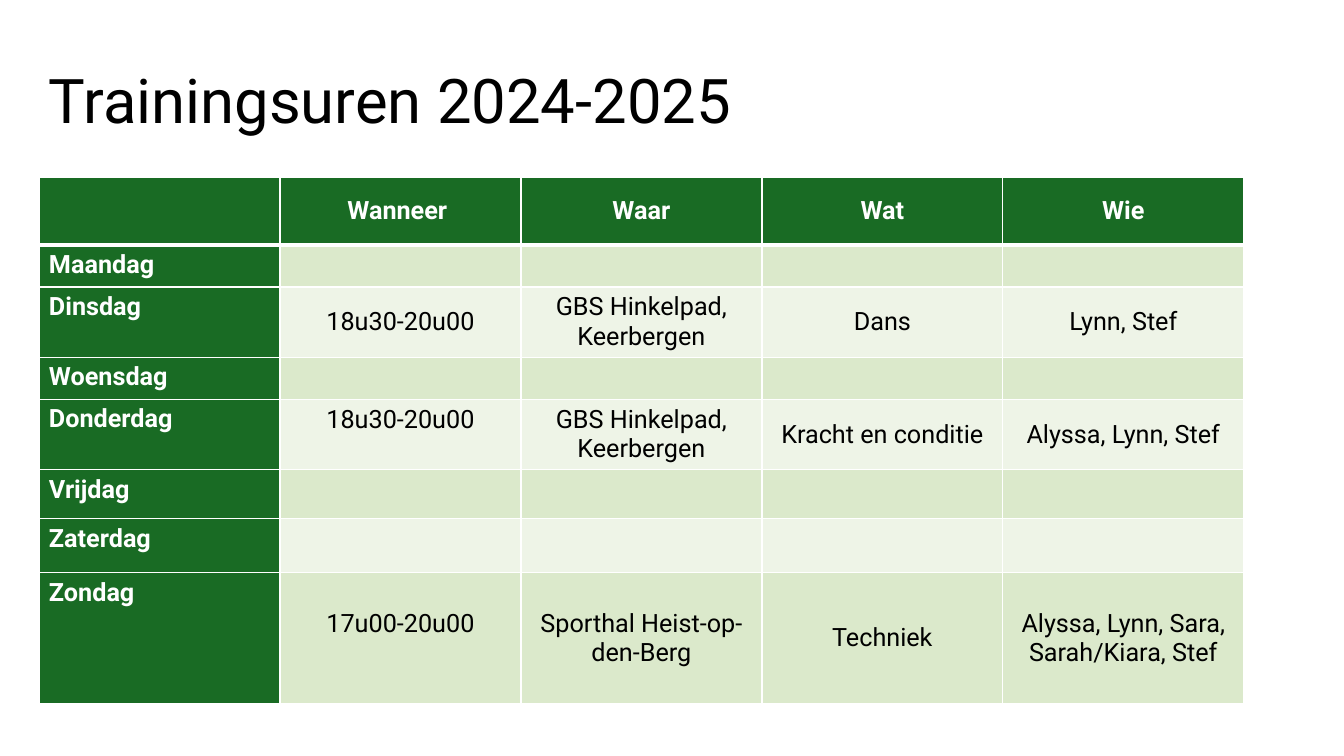
from dataclasses import dataclass

from lxml.etree import SubElement
from pptx import Presentation
from pptx.dml.color import RGBColor
from pptx.enum.text import MSO_ANCHOR, PP_ALIGN
from pptx.oxml.ns import qn
from pptx.util import Emu, Pt

TITLE = "Trainingsuren 2024-2025"
HEADINGS = ["", "Wanneer ", "Waar", "Wat", "Wie"]
SCHOOL = "GBS Hinkelpad, Keerbergen"
DAYS = [
    ("Maandag", "", "", "", ""),
    ("Dinsdag", "18u30-20u00", SCHOOL, "Dans", "Lynn, Stef"),
    ("Woensdag", "", "", "", ""),
    ("Donderdag", "18u30-20u00", SCHOOL, "Kracht en conditie", "Alyssa, Lynn, Stef"),
    ("Vrijdag", "", "", "", ""),
    ("Zaterdag", "", "", "", ""),
    ("Zondag", "17u00-20u00", "Sporthal Heist-op-den-Berg", "Techniek",
     "Alyssa, Lynn, Sara, Sarah/Kiara, Stef"),
]
ROW_HEIGHTS = [68, 42, 70, 42, 70, 49, 54, 131]
COLUMN_WIDTH = 241
LEFT, TITLE_TOP, TABLE_TOP = 39, 65, 177
RAISED_TIMES = {"Donderdag", "Zondag"}  # their time sits half a line above centre
LINE_HEIGHT = 29
MARGIN_X, MARGIN_Y = 10, 5


@dataclass(frozen=True)
class Theme:
    font: str = "Roboto"
    title_size: int = 44
    cell_size: int = 18
    thin: int = 1
    thick: int = 3
    green: str = "196B24"
    band_dark: str = "DBE9CB"
    band_light: str = "EEF4E7"
    white: str = "FFFFFF"
    black: str = "000000"


THEME = Theme()


def px(length):
    return Emu(round(length * 914400 / 100.8))


def style_font(paragraph, size, color, bold=False):
    for run in paragraph.runs:
        run.font.name = THEME.font
        run.font.size = Pt(size)
        run.font.bold = bold
        run.font.color.rgb = RGBColor.from_string(color)


def set_margins(target):
    target.margin_left = target.margin_right = px(MARGIN_X)
    target.margin_top = target.margin_bottom = px(MARGIN_Y)


def add_borders(cell, row):
    top = THEME.thick if row == 1 else THEME.thin
    bottom = THEME.thick if row == 0 else THEME.thin
    properties = cell._tc.get_or_add_tcPr()
    sides = {"lnL": THEME.thin, "lnR": THEME.thin, "lnT": top, "lnB": bottom}
    for side, width in sides.items():
        line = SubElement(properties, qn(f"a:{side}"), w=str(Pt(width)))
        fill = SubElement(line, qn("a:solidFill"))
        SubElement(fill, qn("a:srgbClr"), val=THEME.white)


def fill_cell(cell, text, row, column):
    is_heading = row == 0 or column == 0
    band = THEME.band_dark if row % 2 else THEME.band_light
    add_borders(cell, row)
    cell.fill.solid()
    cell.fill.fore_color.rgb = RGBColor.from_string(THEME.green if is_heading else band)
    set_margins(cell)
    cell.text_frame.text = text
    paragraph = cell.text_frame.paragraphs[0]
    paragraph.font.size = Pt(THEME.cell_size)
    style_font(paragraph, THEME.cell_size,
               THEME.white if is_heading else THEME.black, is_heading)
    if column > 0:
        paragraph.alignment = PP_ALIGN.CENTER
        cell.vertical_anchor = MSO_ANCHOR.MIDDLE


def add_title(slide):
    box = slide.shapes.add_textbox(px(LEFT), px(TITLE_TOP), px(1055), px(145))
    frame = box.text_frame
    frame.word_wrap = True
    frame.vertical_anchor = MSO_ANCHOR.TOP
    set_margins(frame)
    frame.text = TITLE
    frame.paragraphs[0].line_spacing = 0.9
    style_font(frame.paragraphs[0], THEME.title_size, THEME.black)


def add_schedule(slide):
    rows = [HEADINGS, *DAYS]
    table = slide.shapes.add_table(
        len(rows), len(HEADINGS), px(LEFT), px(TABLE_TOP),
        px(COLUMN_WIDTH * len(HEADINGS)), px(sum(ROW_HEIGHTS))).table
    for column in table.columns:
        column.width = px(COLUMN_WIDTH)
    for row, texts in enumerate(rows):
        table.rows[row].height = px(ROW_HEIGHTS[row])
        for column, text in enumerate(texts):
            fill_cell(table.cell(row, column), text, row, column)
        if texts[0] in RAISED_TIMES:
            table.cell(row, 1).margin_bottom = px(MARGIN_Y + LINE_HEIGHT)


def main():
    presentation = Presentation()
    presentation.slide_width, presentation.slide_height = px(1344), px(756)
    slide = presentation.slides.add_slide(presentation.slide_layouts[6])
    add_title(slide)
    add_schedule(slide)
    presentation.save("out.pptx")


if __name__ == "__main__":
    main()
